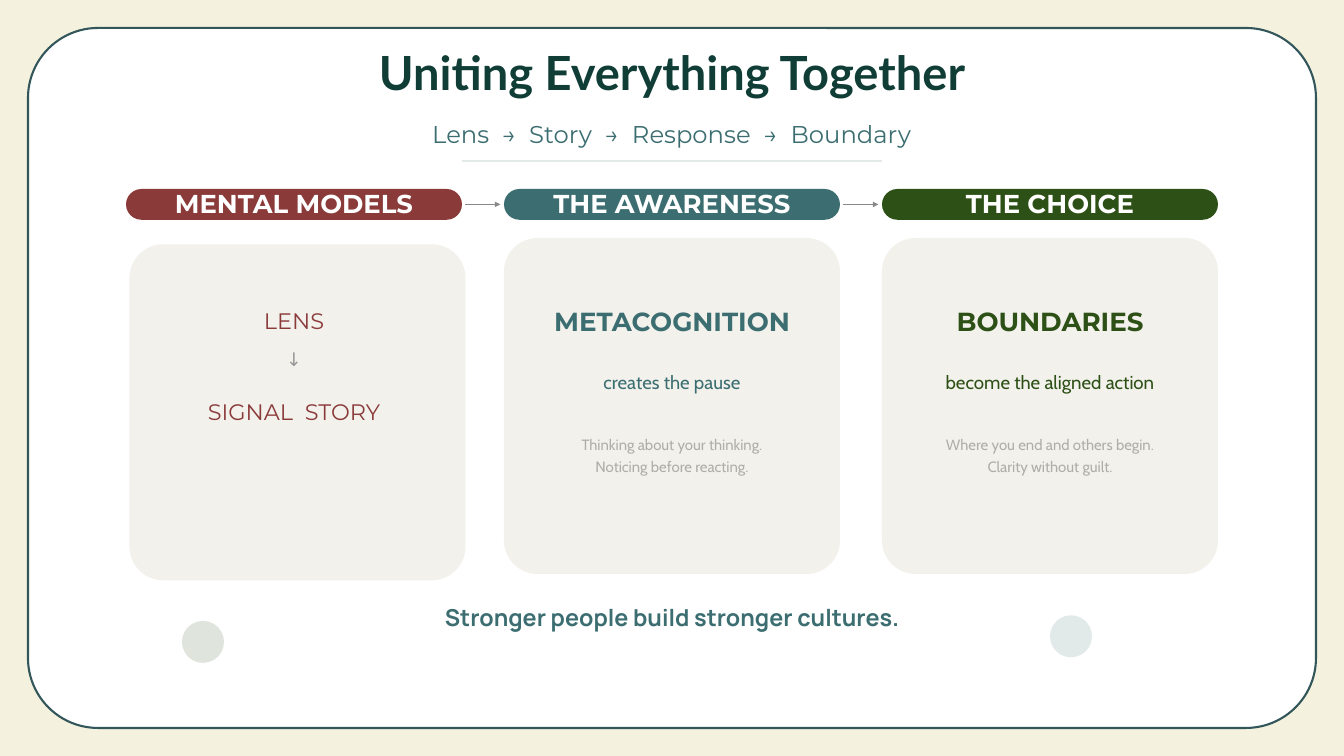
from lxml import etree
from pptx import Presentation
from pptx.dml.color import RGBColor
from pptx.enum.shapes import MSO_CONNECTOR, MSO_SHAPE
from pptx.enum.text import MSO_ANCHOR, PP_ALIGN
from pptx.oxml.ns import qn
from pptx.util import Pt

PX = 9525  # 96 px to the inch
RED, TEAL, GREEN = "8B3A3A", "3C6E71", "2D5016"
COLUMNS = (180, 720, 1260)
COLUMN_W = 480


def paint(fill, color, alpha=100):
    fill.solid()
    fill.fore_color.rgb = RGBColor.from_string(color)
    if alpha < 100:
        clr = fill._xPr.find(".//" + qn("a:srgbClr"))
        etree.SubElement(clr, qn("a:alpha")).set("val", str(alpha * 1000))


def write(box, text, size, font, color, spacing, bold=False, top=0):
    frame = box.text_frame
    frame.word_wrap = True
    frame.margin_left = frame.margin_right = frame.margin_bottom = 0
    frame.margin_top = top * PX
    frame.text = text
    for paragraph in frame.paragraphs:
        paragraph.alignment = PP_ALIGN.CENTER
        paragraph.line_spacing = Pt(spacing)
        for run in paragraph.runs:
            run.font.size = Pt(size)
            run.font.name = font
            run.font.bold = bold
            run.font.color.rgb = RGBColor.from_string(color)


prs = Presentation()
prs.slide_width, prs.slide_height = 1920 * PX, 1080 * PX
slide = prs.slides.add_slide(prs.slide_layouts[5])
shapes = slide.shapes
paint(slide.background.fill, "F4F1DE")

# White frame, behind the title
frame = shapes.add_shape(MSO_SHAPE.ROUNDED_RECTANGLE, 40 * PX, 40 * PX, 1840 * PX, 1000 * PX)
frame.adjustments[0] = 0.1
frame.shadow.inherit = False
paint(frame.fill, "FFFFFF")
paint(frame.line.fill, "33565A")
frame.line.width = Pt(2.25)
shapes._spTree.insert(2, frame._element)

# Title
title = shapes.title
title.left, title.top, title.width, title.height = 260 * PX, 69 * PX, 1400 * PX, 91 * PX
write(title, "Uniting Everything Together", 50.4, "Lato", "103E37", 55.5, True)
title.text_frame.vertical_anchor = MSO_ANCHOR.TOP

# Faint notes, veiled by the translucent cards placed over them
notes = [
    (750, "Thinking about your thinking.\nNoticing before reacting."),
    (1290, "Where you end and others begin.\nClarity without guilt."),
]
for x, text in notes:
    note = shapes.add_textbox(x * PX, 616 * PX, 420 * PX, 60 * PX)
    write(note, text, 16, "Cabin", "555555", 24)

# Cards
for x, y in [(185, 349), (720, 340), (1260, 340)]:
    card = shapes.add_shape(MSO_SHAPE.ROUNDED_RECTANGLE, x * PX, y * PX, COLUMN_W * PX, 480 * PX)
    card.adjustments[0] = 0.1
    card.shadow.inherit = False
    card.line.fill.background()
    paint(card.fill, "EAE8E0", 60)

# Column headings
headings = [("MENTAL MODELS", RED), ("THE AWARENESS", TEAL), ("THE CHOICE", GREEN)]
for x, (text, color) in zip(COLUMNS, headings):
    pill = shapes.add_shape(MSO_SHAPE.ROUNDED_RECTANGLE, x * PX, 270 * PX, COLUMN_W * PX, 44 * PX)
    pill.adjustments[0] = 0.5
    pill.shadow.inherit = False
    pill.line.fill.background()
    paint(pill.fill, color)
    write(pill, text, 27.7, "Montserrat", "FFFFFF", 27.7, True, top=3)
    pill.text_frame.vertical_anchor = MSO_ANCHOR.MIDDLE

# Rule under the subtitle, and arrows between the headings
lines = [(660, 1260, 230, TEAL, 0.75, 40, False)]
for x in COLUMNS[:2]:
    lines.append((x + COLUMN_W + 5, x + COLUMN_W + 55, 292, "888888", 1.5, 100, True))
for start, end, y, color, width, alpha, arrow in lines:
    line = shapes.add_connector(MSO_CONNECTOR.STRAIGHT, start * PX, y * PX, end * PX, y * PX)
    paint(line.line.fill, color, alpha)
    line.line.width = Pt(width)
    if arrow:
        etree.SubElement(line.line._get_or_add_ln(), qn("a:tailEnd")).set("type", "triangle")
    etree.SubElement(line._element.spPr, qn("a:effectLst"))

# Subtitle, card texts and closing line
texts = [
    (260, 170, 1400, 41, "Lens  →  Story  →  Response  →  Boundary", 26, "Montserrat", TEAL, 31.2, False),
    (180, 445, 480, 34, "LENS", 24, "Montserrat", RED, 24, False),
    (180, 502, 480, 29, "↓", 20, "Cabin", "999999", 20, False),
    (180, 575, 480, 34, "SIGNAL  STORY", 24, "Montserrat", RED, 24, False),
    (720, 444, 480, 37, "METACOGNITION", 28, "Montserrat", TEAL, 28, True),
    (740, 525, 440, 36, "creates the pause", 20, "Cabin", TEAL, 28, False),
    (1260, 444, 480, 37, "BOUNDARIES", 28, "Montserrat", GREEN, 28, True),
    (1280, 525, 440, 36, "become the aligned action", 20, "Cabin", GREEN, 28, False),
    (560, 862, 800, 41, "Stronger people build stronger cultures.", 25, "Manrope", TEAL, 30, True),
]
for x, y, w, h, *style in texts:
    write(shapes.add_textbox(x * PX, y * PX, w * PX, h * PX), *style)

# Pale dots
for x, y, color in [(1500, 879, TEAL), (260, 887, GREEN)]:
    dot = shapes.add_shape(MSO_SHAPE.OVAL, x * PX, y * PX, 60 * PX, 60 * PX)
    dot.shadow.inherit = False
    dot.line.fill.background()
    paint(dot.fill, color, 15)

prs.save("out.pptx")
